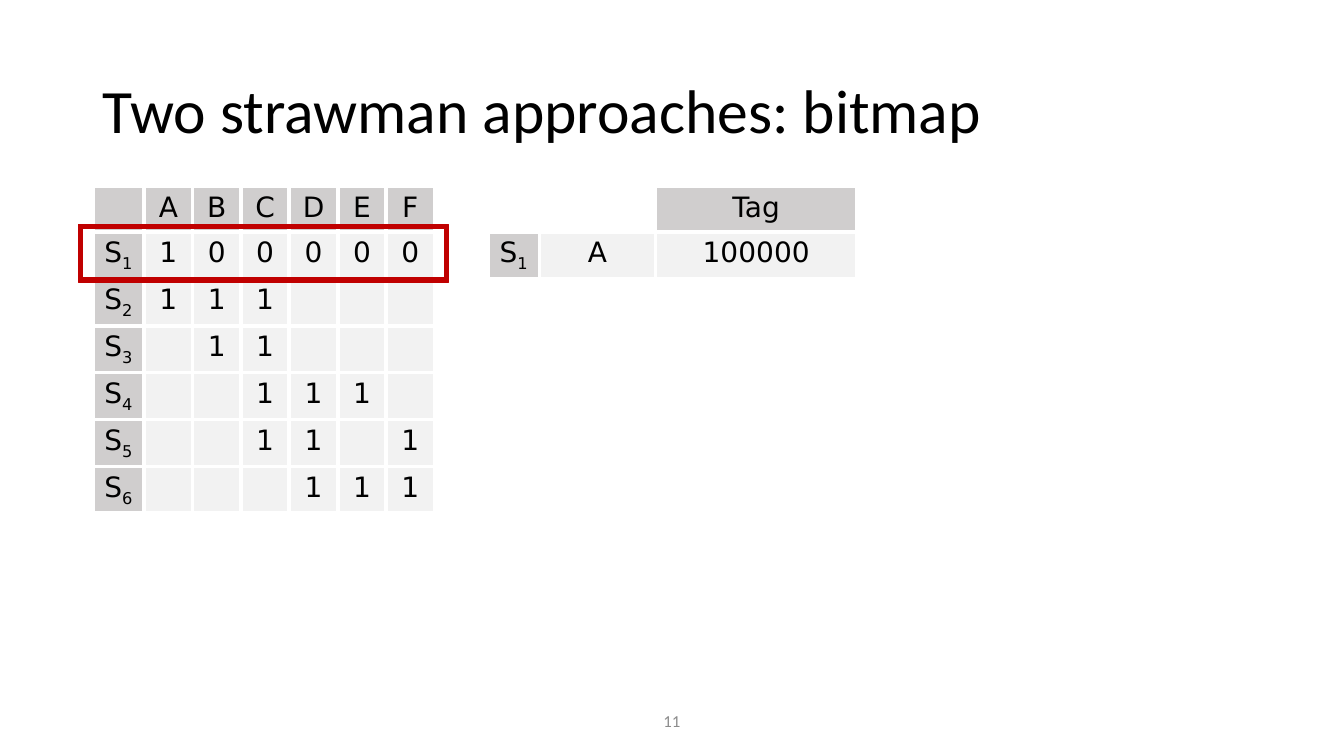
from dataclasses import dataclass

from lxml.etree import SubElement
from pptx import Presentation
from pptx.dml.color import RGBColor
from pptx.enum.shapes import MSO_SHAPE
from pptx.enum.text import MSO_ANCHOR, MSO_AUTO_SIZE, PP_ALIGN
from pptx.oxml.ns import qn
from pptx.slide import Slide
from pptx.table import _Cell
from pptx.text.text import TextFrame, _Paragraph
from pptx.util import Inches, Pt

# Grid, in inches
SLIDE_WIDTH, SLIDE_HEIGHT = 13.33, 7.5
LEFT, TOP = 0.92, 1.85
ROW = 0.45
LABEL_COLUMN, BIT_COLUMN = 0.51, 0.48
TAG_LEFT = 4.84
OVERHANG_X, OVERHANG_Y = 0.14, 0.06

HEADER, BODY, WHITE, BLACK = "D0CECE", "F2F2F2", "FFFFFF", "000000"
HIGHLIGHT, PAGE_GREY = "C00000", "8C8C8C"
TEXT_FONT, TABLE_FONT = "Calibri", "DejaVu Sans"


@dataclass
class Entry:
    text: str = ""
    fill: str = BODY
    subscript: str = ""


@dataclass
class Grid:
    left: float
    columns: list[float]
    rows: list[list[Entry]]

    @property
    def width(self) -> float:
        return sum(self.columns)


def color(code: str) -> RGBColor:
    return RGBColor.from_string(code)


def add_run(paragraph: _Paragraph, text: str, size: float, font: str,
            code: str = BLACK, baseline: int = 0) -> None:
    run = paragraph.add_run()
    run.text = text
    run.font.size = Pt(size)
    run.font.name = font
    run.font.color.rgb = color(code)
    if baseline:
        run.font._element.set("baseline", str(baseline * 1000))


def write_line(frame: TextFrame, text: str, size: float, code: str,
               align: PP_ALIGN) -> _Paragraph:
    frame.word_wrap = True
    frame.auto_size = MSO_AUTO_SIZE.NONE
    frame.vertical_anchor = MSO_ANCHOR.MIDDLE
    line = frame.paragraphs[0]
    line.alignment = align
    add_run(line, text, size, TEXT_FONT, code)
    return line


def add_borders(cell: _Cell, code: str, width: float) -> None:
    properties = cell._tc.get_or_add_tcPr()
    for side in ("lnL", "lnR", "lnT", "lnB"):
        border = SubElement(properties, qn(f"a:{side}"), w=str(Pt(width)))
        fill = SubElement(border, qn("a:solidFill"))
        SubElement(fill, qn("a:srgbClr"), val=code)


def fill_cell(cell: _Cell, entry: Entry) -> None:
    add_borders(cell, WHITE, 3)
    cell.fill.solid()
    cell.fill.fore_color.rgb = color(entry.fill)
    line = cell.text_frame.paragraphs[0]
    line.alignment = PP_ALIGN.CENTER
    if entry.text:
        add_run(line, entry.text, 20, TABLE_FONT)
    if entry.subscript:
        add_run(line, entry.subscript, 20, TABLE_FONT, baseline=-25)


def draw_grid(slide: Slide, grid: Grid) -> None:
    table = slide.shapes.add_table(
        len(grid.rows), len(grid.columns), Inches(grid.left), Inches(TOP),
        Inches(grid.width), Inches(ROW * len(grid.rows))).table
    table.first_row = table.horz_banding = False
    for column, width in zip(table.columns, grid.columns):
        column.width = Inches(width)
    for row, entries in zip(table.rows, grid.rows):
        row.height = Inches(ROW)
        for cell, entry in zip(row.cells, entries):
            fill_cell(cell, entry)


def set_label(number: int) -> Entry:
    return Entry("S", HEADER, str(number))


def bitmap_grid() -> Grid:
    names = "ABCDEF"
    bitmaps = ["100000", "111   ", " 11   ", "  111 ", "  11 1", "   111"]
    rows = [[Entry(name.strip(), HEADER) for name in " " + names]]
    for number, bits in enumerate(bitmaps, 1):
        rows.append([set_label(number)] + [Entry(bit.strip()) for bit in bits])
    return Grid(LEFT, [LABEL_COLUMN] + [BIT_COLUMN] * len(names), rows)


def tag_grid() -> Grid:
    return Grid(TAG_LEFT, [LABEL_COLUMN, 1.15, 2], [
        [Entry(fill=WHITE), Entry(fill=WHITE), Entry("Tag", HEADER)],
        [set_label(1), Entry("A"), Entry("100000")],
    ])


def draw_highlight(slide: Slide, grid: Grid, row: int) -> None:
    frame = slide.shapes.add_shape(
        MSO_SHAPE.FRAME,
        Inches(grid.left - OVERHANG_X), Inches(TOP + ROW * row - OVERHANG_Y - 0.01),
        Inches(grid.width + 2 * OVERHANG_X), Inches(ROW + 2 * OVERHANG_Y))
    frame.adjustments[0] = 0.07
    frame.shadow.inherit = False
    frame.fill.solid()
    frame.fill.fore_color.rgb = color(HIGHLIGHT)
    frame.line.color.rgb = color(HIGHLIGHT)
    frame.line.width = Pt(1)


def main() -> None:
    deck = Presentation()
    deck.slide_width, deck.slide_height = Inches(SLIDE_WIDTH), Inches(SLIDE_HEIGHT)
    slide = deck.slides.add_slide(deck.slide_layouts[5])

    # Title
    title = slide.shapes.title
    title.left, title.top = Inches(LEFT), Inches(0.4)
    title.width, title.height = Inches(SLIDE_WIDTH - 2 * LEFT), Inches(1.45)
    heading = write_line(title.text_frame, "Two strawman approaches: bitmap",
                         44, BLACK, PP_ALIGN.LEFT)
    heading.line_spacing = 0.9

    # Bitmap of each set, and the tag read from its first row
    bitmap = bitmap_grid()
    draw_grid(slide, bitmap)
    draw_grid(slide, tag_grid())
    draw_highlight(slide, bitmap, row=1)

    # Page number
    page_width = 3
    page = slide.shapes.add_textbox(
        Inches((SLIDE_WIDTH - page_width) / 2), Inches(6.95),
        Inches(page_width), Inches(0.4))
    write_line(page.text_frame, "11", 12, PAGE_GREY, PP_ALIGN.CENTER)

    deck.save("out.pptx")


if __name__ == "__main__":
    main()
